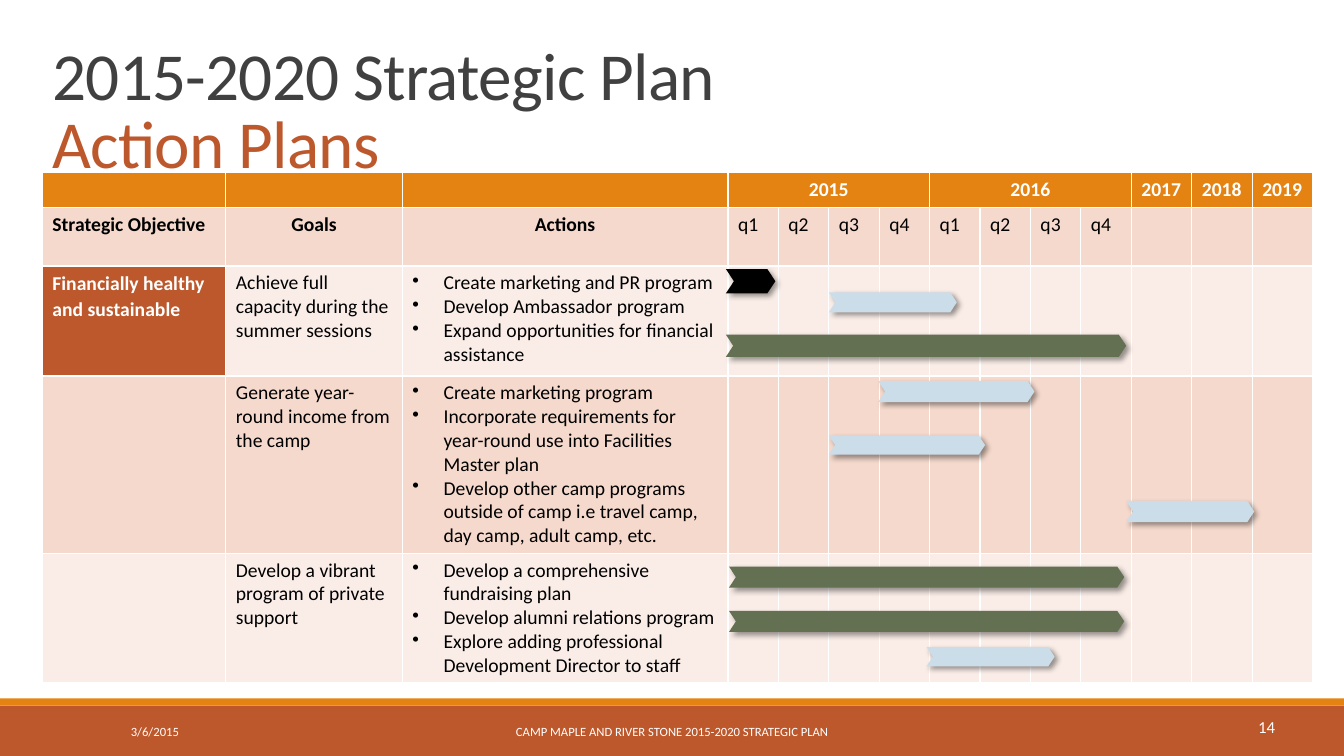
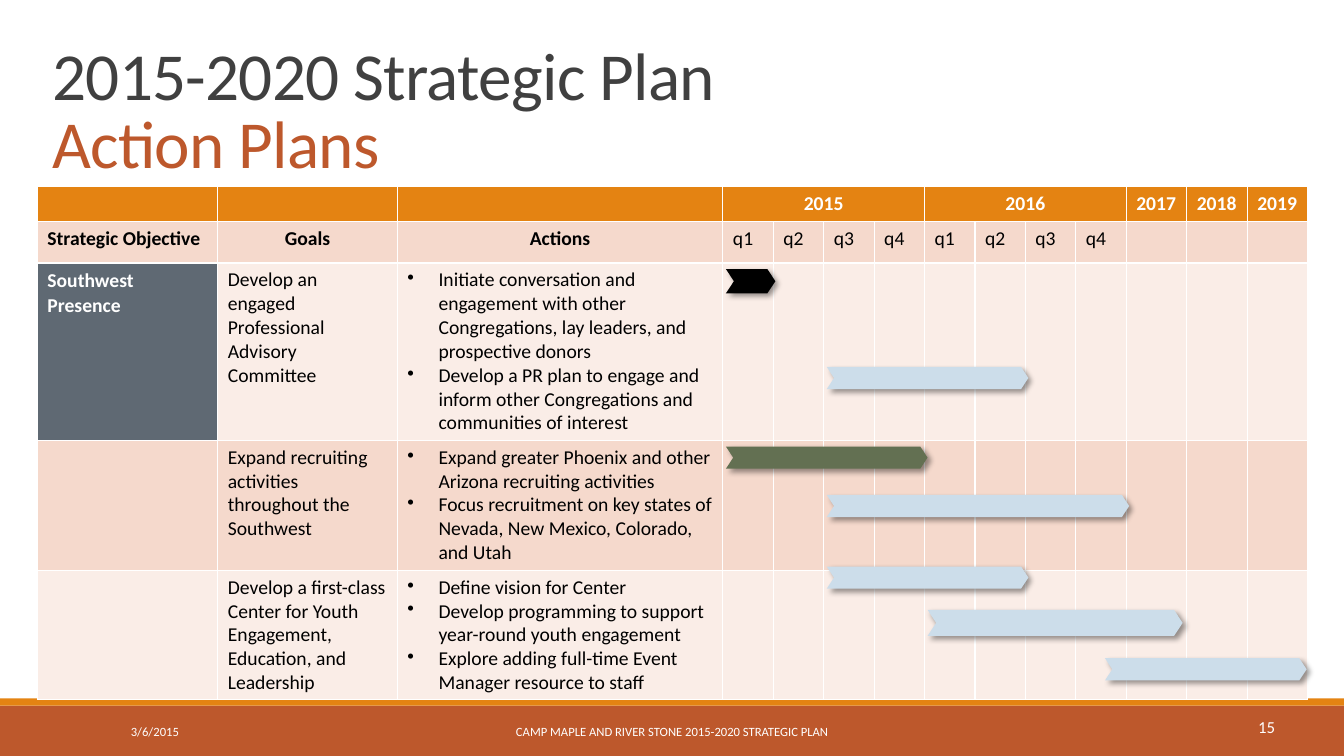
import pptx
import pptx.util
import pptx.dml.color
import pptx.enum.shapes
import pptx.enum.text
import pptx.oxml
import pptx.oxml.ns

Inches, Pt = pptx.util.Inches, pptx.util.Pt
ALIGN = pptx.enum.text.PP_ALIGN
ANCHOR = pptx.enum.text.MSO_ANCHOR
SHAPE = pptx.enum.shapes.MSO_SHAPE

FONT = "Calibri"
INK = {
    "rust": "BD582C", "orange": "E48312", "slate": "5F6973",
    "dark": "404040", "white": "FFFFFF", "black": "000000",
    "rose": "F5D9CC", "blush": "FAEDE7",
    "green": "637052", "sky": "CCDDEA",
}
DATE = "3/6/2015"
FOOTER = "CAMP MAPLE AND RIVER STONE 2015-2020 STRATEGIC PLAN"

QUARTERS = ["q1", "q2", "q3", "q4"] * 2
YEARS = ["2017", "2018", "2019"]
HEADS = ["Strategic Objective", "Goals", "Actions"]
FIRST = len(HEADS)                   # first column of the time grid
SPANS = {FIRST: "2015", FIRST + 4: "2016"}
COLS = len(HEADS) + len(QUARTERS) + len(YEARS)
INDENT = Inches(0.31)

# Each bar: left from the time grid, top from the table, width, height, colour
PLANS = [
    {
        "page": "14", "left": 0.42, "top": 1.71,
        "wide": [1.82, 1.75, 3.23],
        "high": [0.35, 0.58, 1.09, 1.76, 1.28],
        "aim": "Financially healthy and sustainable", "tint": "rust",
        "goals": [
            ("Achieve full capacity during the summer sessions",
             ["Create marketing and PR program",
              "Develop Ambassador program",
              "Expand opportunities for financial assistance"]),
            ("Generate year-round income from the camp",
             ["Create marketing program",
              "Incorporate requirements for year-round use into Facilities Master plan",
              "Develop other camp programs outside of camp i.e travel camp, "
              "day camp, adult camp, etc."]),
            ("Develop a vibrant program of private support",
             ["Develop a comprehensive fundraising plan",
              "Develop alumni relations program",
              "Explore adding professional Development Director to staff"]),
        ],
        "bars": [
            (-0.02, 0.96, 0.49, 0.24, "black"),
            (1, 1.19, 1.27, 0.2, "sky"),
            (-0.02, 1.61, 3.97, 0.22, "green"),
            (1.49, 2.07, 1.55, 0.21, "sky"),
            (1, 2.61, 1.55, 0.19, "sky"),
            (3.95, 3.26, 1.27, 0.21, "sky"),
            (0.01, 3.91, 3.92, 0.21, "green"),
            (0.01, 4.35, 3.92, 0.21, "green"),
            (1.97, 4.71, 1.27, 0.19, "sky"),
        ],
    },
    {
        "page": "15", "left": 0.37, "top": 1.85,
        "wide": [1.79, 1.78, 3.23],
        "high": [0.35, 0.41, 1.76, 1.29, 1.28],
        "aim": "Southwest Presence", "tint": "slate",
        "goals": [
            ("Develop an engaged Professional Advisory Committee",
             ["Initiate conversation and engagement with other Congregations, "
              "lay leaders, and prospective donors",
              "Develop a PR plan to engage and inform other Congregations "
              "and communities of interest"]),
            ("Expand recruiting activities throughout the Southwest",
             ["Expand greater Phoenix and other Arizona recruiting activities",
              "Focus recruitment on key states of Nevada, New Mexico, "
              "Colorado, and Utah"]),
            ("Develop a first-class Center for Youth Engagement, Education, "
             "and Leadership",
             ["Define vision for Center",
              "Develop programming to support year-round youth engagement",
              "Explore adding full-time Event Manager resource to staff"]),
        ],
        "bars": [
            (0.03, 0.82, 0.49, 0.24, "black"),
            (1.03, 1.79, 2, 0.22, "sky"),
            (0.03, 2.58, 2, 0.22, "green"),
            (1.03, 3.06, 3, 0.22, "sky"),
            (1.03, 3.77, 2, 0.22, "sky"),
            (2.03, 4.2, 2.53, 0.26, "sky"),
            (3.79, 4.68, 2, 0.22, "sky"),
        ],
    },
]


def color(name):
    return pptx.dml.color.RGBColor.from_string(INK[name])


def style(para, size, ink, bold=False, align=ALIGN.LEFT):
    font = para.font
    font.name, font.size, font.bold = FONT, Pt(size), bold
    font.color.rgb = color(ink)
    para.alignment = align


def shape(slide, kind, box, ink):
    item = slide.shapes.add_shape(kind, *map(Inches, box))
    item.fill.solid()
    item.fill.fore_color.rgb = color(ink)
    item.line.fill.background()
    item.shadow.inherit = False
    return item


def label(slide, box, text, size, align=ALIGN.LEFT, anchor=ANCHOR.MIDDLE):
    frame = slide.shapes.add_textbox(*map(Inches, box)).text_frame
    frame.word_wrap = True
    frame.vertical_anchor = anchor
    frame.text = text
    style(frame.paragraphs[0], size, "white", align=align)
    return frame


def title(slide, box):
    head = slide.shapes.title
    head.left, head.top, head.width, head.height = map(Inches, box)
    frame = head.text_frame
    frame.vertical_anchor = ANCHOR.BOTTOM
    frame.auto_size = pptx.enum.text.MSO_AUTO_SIZE.NONE
    para = frame.paragraphs[0]
    style(para, 48, "dark")
    para.line_spacing = 0.85
    para.add_run().text = "2015-2020 Strategic Plan"
    para.add_line_break()
    last = para.add_run()
    last.text = "Action Plans"
    last.font.color.rgb = color("rust")
    for run in para.runs:
        run.font._element.set("spc", "-50")


def footer(slide, top, page):
    shape(slide, SHAPE.RECTANGLE, (0, top, 13.33, 0.5), "rust")
    shape(slide, SHAPE.RECTANGLE, (0, top - 0.07, 13.33, 0.07), "orange")
    line = top + 0.06
    label(slide, (1.2, line, 2.7, 0.4), DATE, 9)
    label(slide, (4.03, line, 5.27, 0.4), FOOTER, 9, ALIGN.CENTER)
    frame = label(slide, (12.38, line, 0.37, 0.3), page, 12, anchor=ANCHOR.TOP)
    frame.word_wrap = False


def bullet(para):
    props = para._p.get_or_add_pPr()
    props.set("marL", str(INDENT))
    props.set("indent", str(-INDENT))
    mark = pptx.oxml.parse_xml(
        f'<a:buChar {pptx.oxml.ns.nsdecls("a")} char="•"/>')
    props.insert_element_before(mark, "a:tabLst", "a:defRPr", "a:extLst")


def cell(grid, row, col, fill, text="", ink="black", **look):
    box = grid.cell(row, col)
    box.fill.solid()
    box.fill.fore_color.rgb = color(fill)
    box.text_frame.text = text
    for para in box.text_frame.paragraphs:
        style(para, 14, ink, **look)
    return box.text_frame.paragraphs


def table(slide, plan):
    wide = plan["wide"] + [0.5] * len(QUARTERS) + [0.6] * len(YEARS)
    high = plan["high"]
    box = (plan["left"], plan["top"], sum(wide), sum(high))
    grid = slide.shapes.add_table(len(high), COLS, *map(Inches, box)).table
    grid.horz_banding = False
    for col, size in zip(grid.columns, wide):
        col.width = Inches(size)
    for row, size in zip(grid.rows, high):
        row.height = Inches(size)

    # Year and quarter headings
    names = HEADS + QUARTERS + [""] * len(YEARS)
    tops = dict(SPANS) | dict(enumerate(YEARS, COLS - len(YEARS)))
    for col, name in enumerate(names):
        mid = ALIGN.CENTER if col in SPANS else ALIGN.LEFT
        cell(grid, 0, col, "orange", tops.get(col, ""), "white",
             bold=True, align=mid)
        mid = ALIGN.CENTER if col in (1, 2) else ALIGN.LEFT
        cell(grid, 1, col, "rose", name, bold=col < FIRST, align=mid)
    for col in SPANS:
        grid.cell(0, col).merge(grid.cell(0, col + 3))

    # Goals with their actions
    for row, (goal, acts) in enumerate(plan["goals"], 2):
        band = "rose" if row % 2 else "blush"
        texts = ["", goal, "\n".join(acts)] + [""] * (COLS - FIRST)
        for col, text in enumerate(texts):
            paras = cell(grid, row, col, band, text)
            if col == 2:
                for para in paras:
                    bullet(para)
    aim = cell(grid, 2, 0, plan["tint"], plan["aim"], "white", bold=True)
    aim[0].line_spacing = 1.05


def bars(slide, left, top, items):
    for x, y, wide, high, ink in items:
        bar = shape(slide, SHAPE.CHEVRON, (left + x, top + y, wide, high), ink)
        bar.adjustments[0] = 0.33
        glow = pptx.oxml.parse_xml(
            f'<a:outerShdw {pptx.oxml.ns.nsdecls("a")} blurRad="{Pt(4)}" '
            f'dist="{Pt(3)}" dir="2700000" algn="tl" rotWithShape="0">'
            f'<a:srgbClr val="{INK["black"]}"><a:alpha val="40000"/></a:srgbClr>'
            '</a:outerShdw>')
        bar._element.spPr.find(pptx.oxml.ns.qn("a:effectLst")).append(glow)


def build(deck, plan):
    slide = deck.slides.add_slide(deck.slide_layouts[5])
    footer(slide, 7, plan["page"])
    title(slide, (0.42, 0.27, 11, 1.59))
    table(slide, plan)
    bars(slide, plan["left"] + sum(plan["wide"]), plan["top"], plan["bars"])


def main():
    deck = pptx.Presentation()
    deck.slide_width, deck.slide_height = Inches(13.33), Inches(7.5)
    for plan in PLANS:
        build(deck, plan)
    deck.save("out.pptx")


if __name__ == "__main__":
    main()
